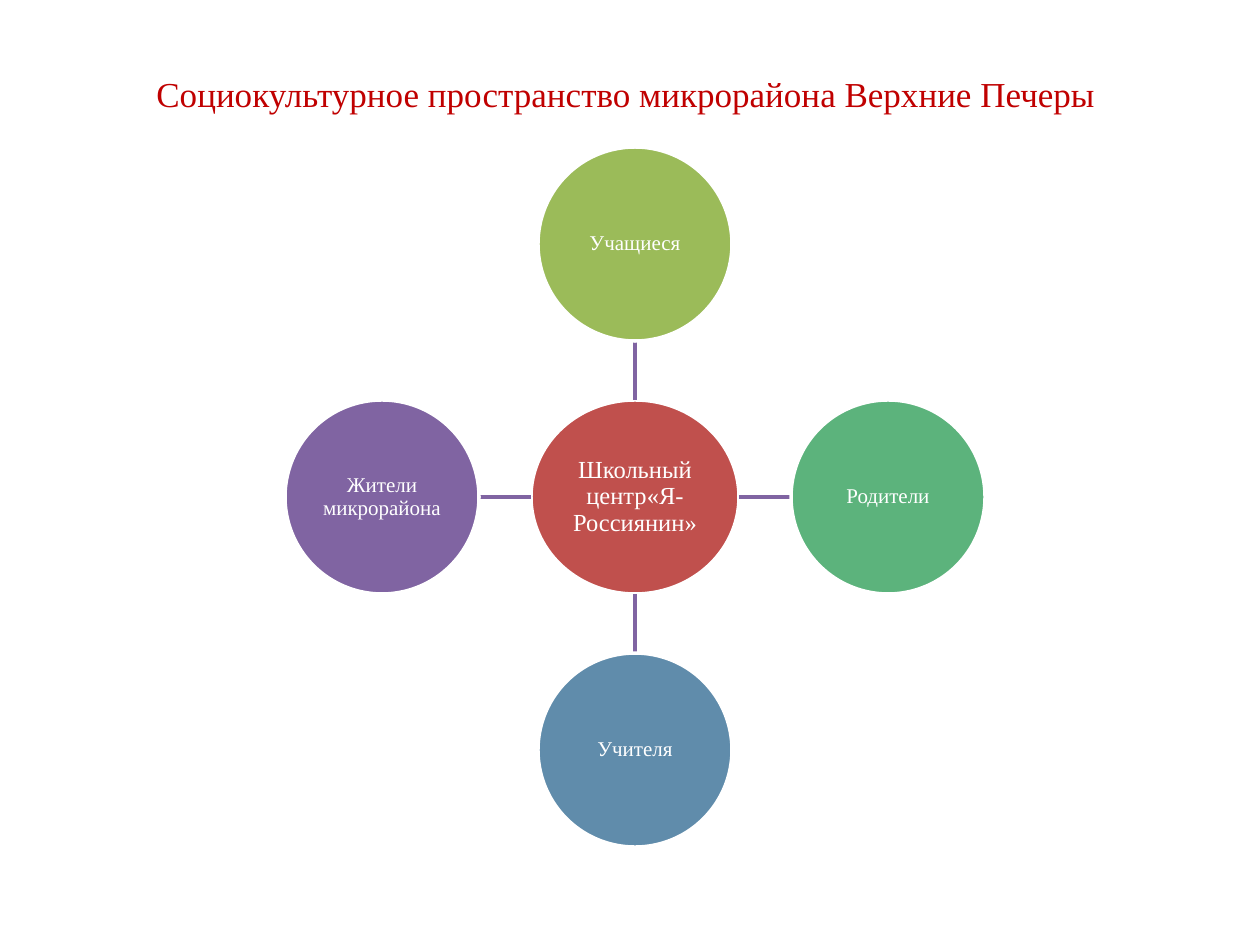
import dataclasses

import pptx
import pptx.dml.color
import pptx.enum.shapes
import pptx.enum.text
import pptx.oxml.ns
import pptx.util
from lxml import etree

PX = 914400 / 126
FONT = "Times New Roman"
COLORS = {
    "white": "FFFFFF",
    "title": "C00000",
    "hub": "C0504D",
    "green": "9BBB59",
    "teal": "5CB37C",
    "blue": "608CAB",
    "purple": "8064A2",
}
CENTER_X, CENTER_Y = 635, 497
ORBIT = 253
DIAMETER = 194
HUB_WIDTH = 208


@dataclasses.dataclass(frozen=True)
class Satellite:
    text: str
    color: str
    across: int
    down: int


SATELLITES = [
    Satellite("Учащиеся", "green", 0, -1),
    Satellite("Родители", "teal", 1, 0),
    Satellite("Учителя", "blue", 0, 1),
    Satellite("Жители микрорайона", "purple", -1, 0),
]


def px(length: int) -> pptx.util.Emu:
    return pptx.util.Emu(round(length * PX))


def rgb(name: str) -> pptx.dml.color.RGBColor:
    return pptx.dml.color.RGBColor.from_string(COLORS[name])


def write(box, text: str, *, size: int, color: str, align=None,
          spacing: float | None = None) -> None:
    para = box.text_frame.paragraphs[0]
    para.alignment = align
    para.line_spacing = spacing
    span = para.add_run()
    span.text = text
    span.font.name = FONT
    span.font.size = pptx.util.Pt(size)
    span.font.color.rgb = rgb(color)


def draw_circle(page, text: str, x: int, y: int, width: int, color: str, size: int) -> None:
    circle = page.shapes.add_shape(
        pptx.enum.shapes.MSO_SHAPE.OVAL,
        px(x - width // 2), px(y - DIAMETER // 2), px(width), px(DIAMETER))
    circle.shadow.inherit = False
    circle.fill.solid()
    circle.fill.fore_color.rgb = rgb(color)
    circle.line.color.rgb = rgb("white")
    circle.line.width = pptx.util.Pt(2)
    frame = circle.text_frame
    frame.word_wrap = True
    frame.vertical_anchor = pptx.enum.text.MSO_ANCHOR.MIDDLE
    frame.margin_left = frame.margin_right = px(1)
    frame.margin_top = frame.margin_bottom = px(1)
    write(circle, text, size=size, color="white",
          align=pptx.enum.text.PP_ALIGN.CENTER, spacing=0.9)


def draw_spoke(page, satellite: Satellite) -> None:
    hub_radius = (HUB_WIDTH if satellite.across else DIAMETER) // 2
    start, end = hub_radius, ORBIT - DIAMETER // 2
    spoke = page.shapes.add_connector(
        pptx.enum.shapes.MSO_CONNECTOR.STRAIGHT,
        px(CENTER_X + satellite.across * start), px(CENTER_Y + satellite.down * start),
        px(CENTER_X + satellite.across * end), px(CENTER_Y + satellite.down * end))
    spoke.line.color.rgb = rgb("purple")
    spoke.line.width = pptx.util.Pt(2)
    etree.SubElement(spoke._element.spPr, pptx.oxml.ns.qn("a:effectLst"))


def draw_title(page, text: str) -> None:
    box = page.shapes.add_textbox(px(144), px(66), px(983), px(55))
    box.text_frame.word_wrap = True
    write(box, text, size=20, color="title")


def main() -> None:
    deck = pptx.Presentation()
    deck.slide_width, deck.slide_height = px(1260), px(945)
    page = deck.slides.add_slide(deck.slide_layouts[6])
    draw_circle(page, "Школьный центр«Я- Россиянин»", CENTER_X, CENTER_Y,
                HUB_WIDTH, "hub", 14)
    for satellite in SATELLITES:
        draw_spoke(page, satellite)
        draw_circle(page, satellite.text,
                    CENTER_X + satellite.across * ORBIT,
                    CENTER_Y + satellite.down * ORBIT,
                    DIAMETER, satellite.color, 12)
    draw_title(page, "Социокультурное пространство микрорайона Верхние Печеры")
    deck.save("out.pptx")


if __name__ == "__main__":
    main()
